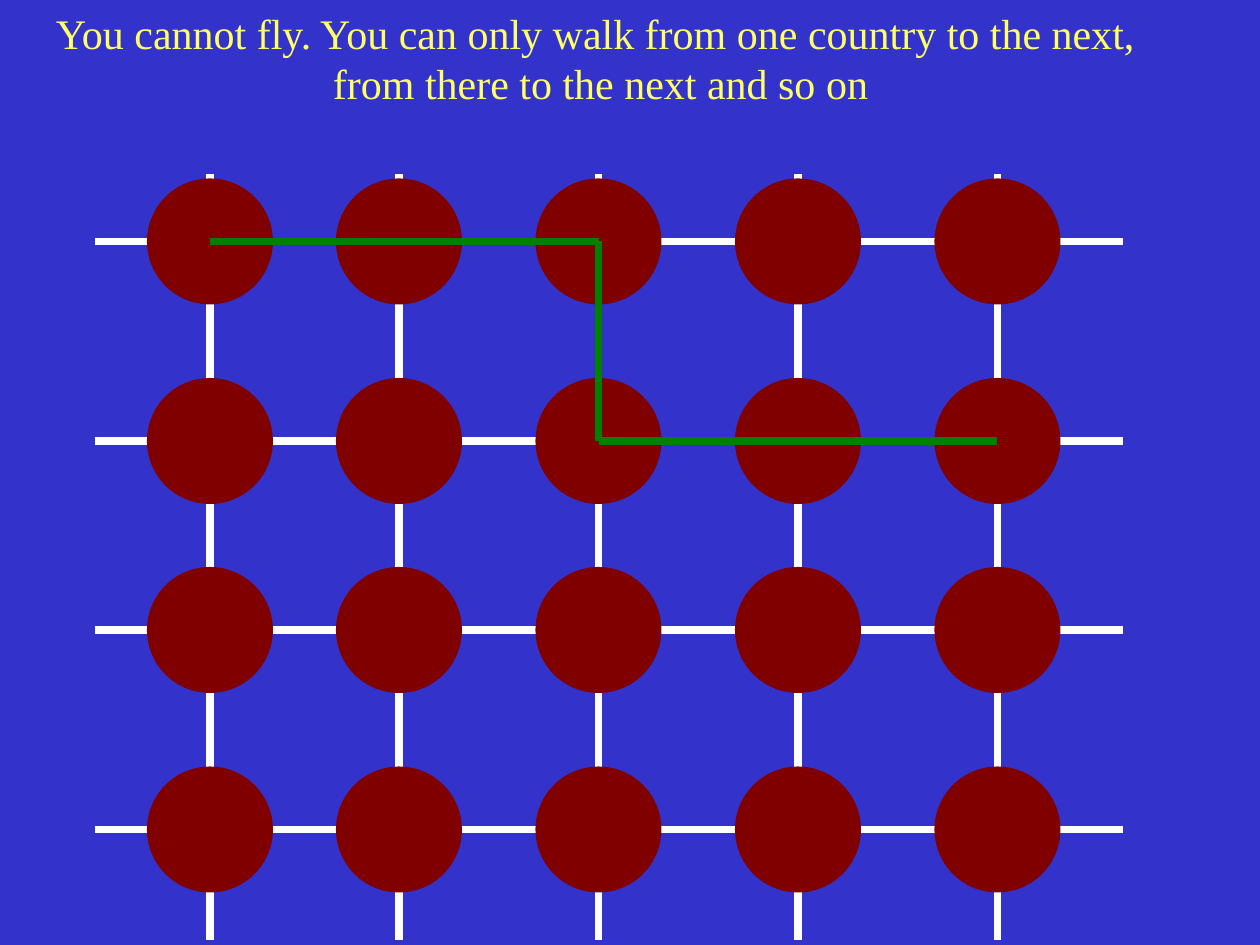
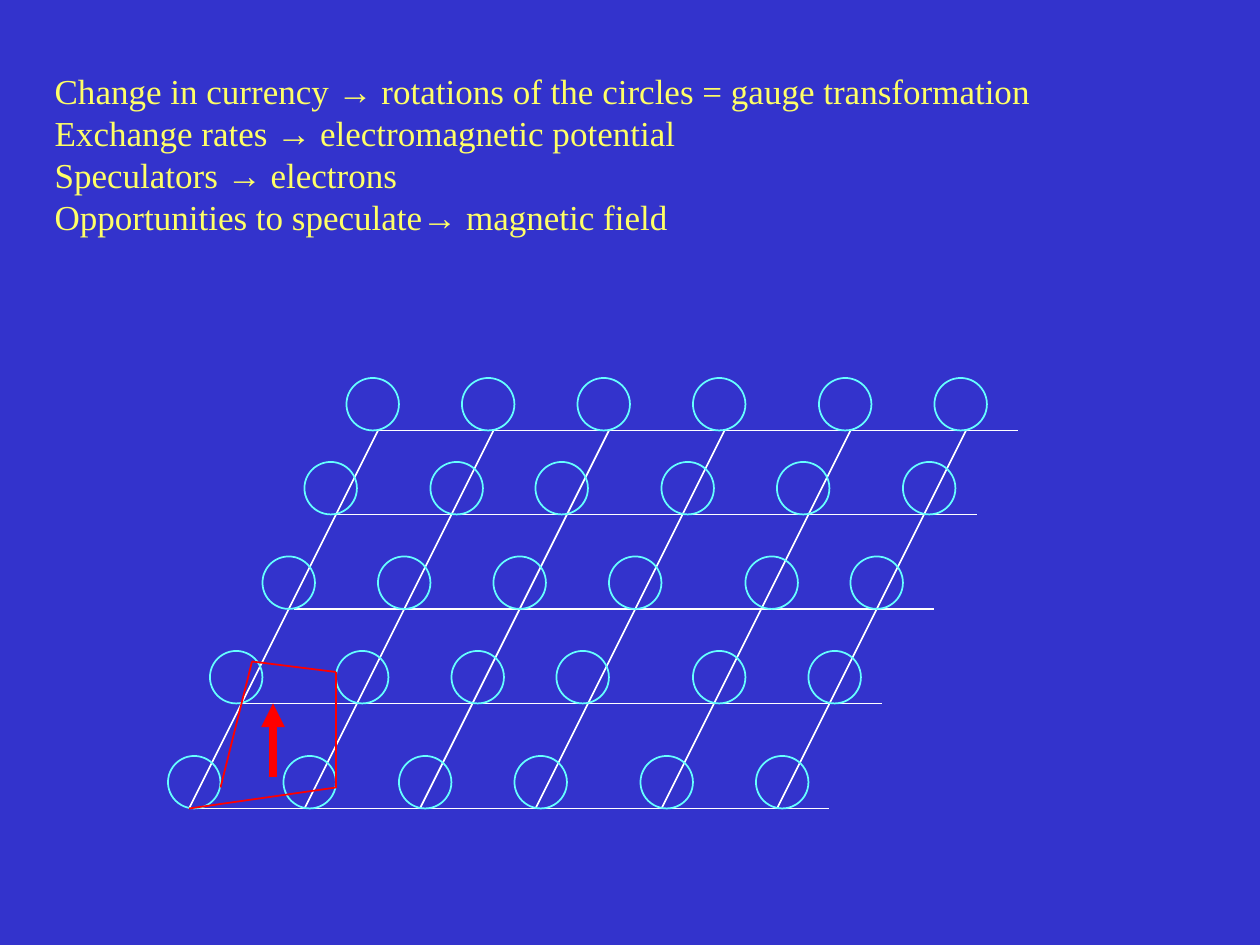
import itertools

import pptx
import pptx.dml.color
import pptx.enum.shapes
import pptx.enum.text
import pptx.oxml
import pptx.oxml.ns
import pptx.util
from lxml import etree

SCALE = 7620
FONT = "Times New Roman"
COLORS = {
    "back": "3333CC",
    "text": "FFFF66",
    "grid": "FFFFFF",
    "land": "800000",
    "route": "008000",
    "ring": "66FFFF",
    "loop": "FF0000",
}

WALK = (
    "You cannot fly. You can only walk from one country to the next, ",
    "from there to the next and so on",
)
TERMS = (
    "Change in currency → rotations of the circles = gauge transformation",
    "Exchange rates → electromagnetic potential",
    "Speculators → electrons",
    "Opportunities to speculate→ magnetic field",
)

COLS = (200, 380, 570, 760, 950)
ROWS = (230, 420, 600, 790)
LAND = 120
ROUTE = ((0, 0), (1, 0), (2, 0), (2, 1), (3, 1), (4, 1))

FEET = (180, 290, 400, 510, 630, 740)
SLANT = 180
SPAN = 610
RING = 50
TIERS = (
    (180, 770, (160, 270, 380, 490, 610, 720)),
    (230, 670, (200, 320, 430, 530, 660, 770)),
    (280, 580, (250, 360, 470, 580, 710, 810)),
    (320, 490, (290, 410, 510, 630, 740, 860)),
    (360, 410, (330, 440, 550, 660, 780, 890)),
)
LOOP = ((180, 770), (320, 750), (320, 640), (240, 630), (210, 750))


def px(*nums):
    return [pptx.util.Emu(num * SCALE) for num in nums]


def paint(name):
    return pptx.dml.color.RGBColor.from_string(COLORS[name])


def add_tag(parent, tag, **attrs):
    return etree.SubElement(parent, pptx.oxml.ns.qn(tag), **attrs)


def add_line(slide, start, end, color, width, arrow=False):
    kind = pptx.enum.shapes.MSO_CONNECTOR.STRAIGHT
    line = slide.shapes.add_connector(kind, *px(*start, *end))
    line.line.color.rgb = paint(color)
    line.line.width = pptx.util.Pt(width)
    props = line.element.spPr
    if arrow:
        add_tag(props.find(pptx.oxml.ns.qn("a:ln")), "a:tailEnd", type="triangle")
    add_tag(props, "a:effectLst")


def add_disc(slide, left, top, size, fill=None, edge=None):
    kind = pptx.enum.shapes.MSO_SHAPE.OVAL
    disc = slide.shapes.add_shape(kind, *px(left, top, size, size))
    disc.shadow.inherit = False
    if fill:
        disc.fill.solid()
        disc.fill.fore_color.rgb = paint(fill)
    else:
        disc.fill.background()
    if edge:
        disc.line.color.rgb = paint(edge)
        disc.line.width = pptx.util.Pt(1)
    else:
        disc.line.fill.background()


def set_text(holder, box, lines, size, align, wrap):
    holder.left, holder.top, holder.width, holder.height = px(*box)
    frame = holder.text_frame
    frame.text = "\n".join(lines)
    frame.word_wrap = wrap
    frame.auto_size = pptx.enum.text.MSO_AUTO_SIZE.NONE
    frame.vertical_anchor = pptx.enum.text.MSO_ANCHOR.TOP
    for para in frame.paragraphs:
        para.alignment = align
        para.space_before = pptx.util.Pt(0)
        props = para._p.get_or_add_pPr()
        props.set("marL", "0")
        props.set("indent", "0")
        add_tag(props, "a:buNone")
        for run in para.runs:
            run.font.name = FONT
            run.font.size = pptx.util.Pt(size)
            run.font.color.rgb = paint("text")


def draw_walk(deck):
    slide = deck.slides.add_slide(deck.slide_layouts[5])
    center = pptx.enum.text.PP_ALIGN.CENTER
    set_text(slide.shapes.title, (41, 1, 1062, 109), WALK, 24, center, False)
    for col in COLS:
        add_line(slide, (col, 166), (col, 895), "grid", 4.5)
    for row in ROWS:
        add_line(slide, (90, row), (1070, row), "grid", 4.5)
        for col in COLS:
            add_disc(slide, col - LAND // 2, row - LAND // 2, LAND, fill="land")
    stops = [(COLS[col], ROWS[row]) for col, row in ROUTE]
    for start, end in itertools.pairwise(stops):
        add_line(slide, start, end, "route", 4.5)


def draw_gauge(deck):
    slide = deck.slides.add_slide(deck.slide_layouts[1])
    title = slide.shapes.title.element
    title.getparent().remove(title)
    left = pptx.enum.text.PP_ALIGN.LEFT
    set_text(slide.placeholders[1], (40, 60, 1140, 172), TERMS, 20, left, True)
    for foot in FEET:
        add_line(slide, (foot, 770), (foot + SLANT, 410), "grid", 1)
    for start, base, rings in TIERS:
        add_line(slide, (start, base), (start + SPAN, base), "grid", 0.75)
        for ring in rings:
            add_disc(slide, ring, base - RING, RING, edge="ring")
    for start, end in itertools.pairwise(LOOP):
        add_line(slide, start, end, "loop", 1)
    add_line(slide, (260, 740), (260, 670), "loop", 4.5, arrow=True)


def main():
    deck = pptx.Presentation()
    deck.slide_width, deck.slide_height = px(1200, 900)
    fill = deck.slide_master.background.fill
    fill.solid()
    fill.fore_color.rgb = paint("back")
    draw_walk(deck)
    draw_gauge(deck)
    deck.save("out.pptx")


if __name__ == "__main__":
    main()
